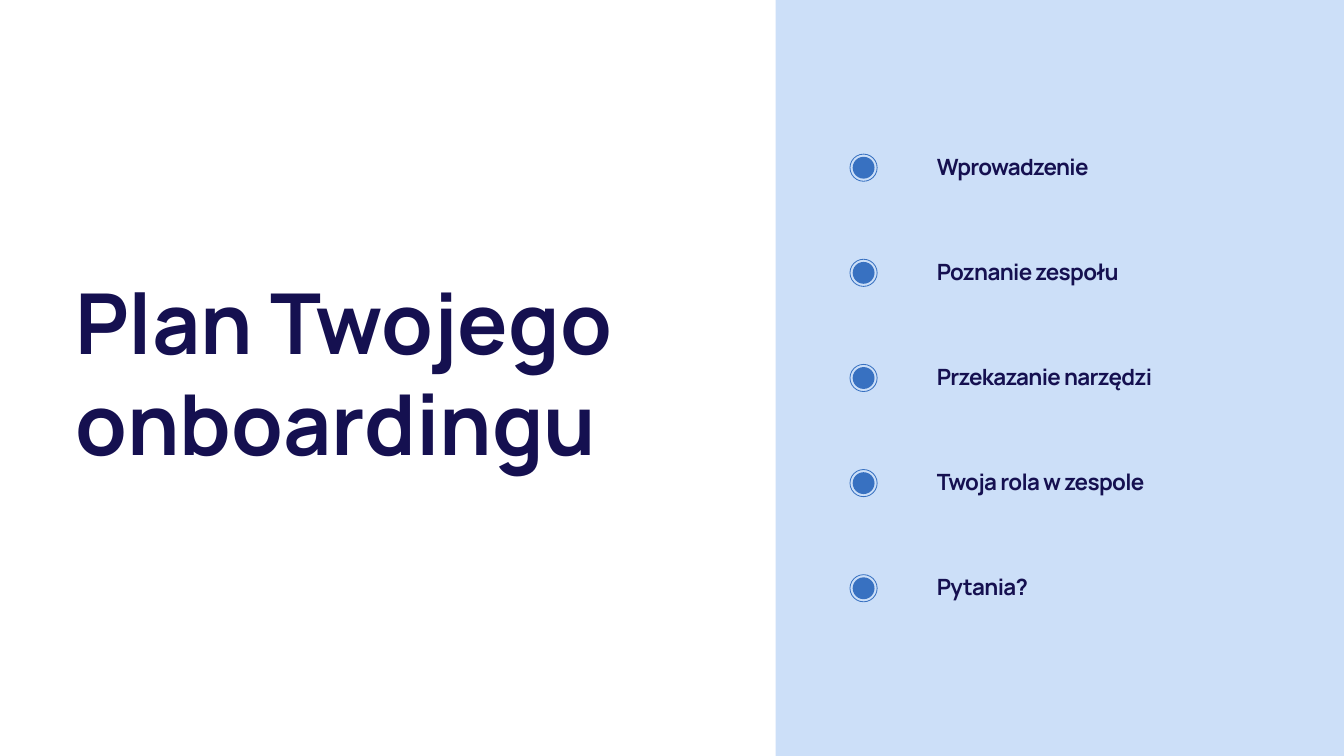
from pptx import Presentation
from pptx.dml.color import RGBColor
from pptx.enum import shapes, text
from pptx.util import Pt

COLOURS = {"panel": "CCDFF8", "marker": "3871C1", "ink": "151050"}
AGENDA = [
    "Wprowadzenie",
    "Poznanie zespołu",
    "Przekazanie narzędzi",
    "Twoja rola w zespole",
    "Pytania?",
]
SLIDE_WIDTH, SLIDE_HEIGHT = 1440, 810
PANEL_LEFT = 831
ROW_PITCH = 112.65
RING_SIZE, DOT_SIZE = 30, 23.4


def add_filled(parent, kind, left, top, width, height, colour):
    """Add a borderless preset shape in one colour."""
    shape = parent.add_shape(kind, Pt(left), Pt(top), Pt(width), Pt(height))
    shape.shadow.inherit = False
    shape.fill.solid()
    shape.fill.fore_color.rgb = RGBColor.from_string(COLOURS[colour])
    shape.line.fill.background()
    return shape


def add_label(slide, words, left, top, width, height, size, leading, tracking=0):
    """Add a bold Manrope text box with fixed leading and tracking in points."""
    label = slide.shapes.add_textbox(Pt(left), Pt(top), Pt(width), Pt(height))
    frame = label.text_frame
    frame.margin_left = frame.margin_right = 0
    frame.margin_top = frame.margin_bottom = 0
    frame.word_wrap = True
    frame.auto_size = text.MSO_AUTO_SIZE.SHAPE_TO_FIT_TEXT
    frame.text = words
    paragraph = frame.paragraphs[0]
    paragraph.line_spacing = Pt(leading)
    run = paragraph.runs[0]
    run.font.name = "Manrope"
    run.font.size = Pt(size)
    run.font.bold = True
    run.font.color.rgb = RGBColor.from_string(COLOURS["ink"])
    if tracking:
        run.font._element.set("spc", str(round(tracking * 100)))


def add_marker(slide, left, top):
    """Add a grouped dot with a thin ring around it."""
    marker = slide.shapes.add_group_shape().shapes
    inset = (RING_SIZE - DOT_SIZE) / 2
    add_filled(marker, shapes.MSO_SHAPE.OVAL, left + inset, top + inset,
               DOT_SIZE, DOT_SIZE, "marker")
    ring = add_filled(marker, shapes.MSO_SHAPE.DONUT, left, top,
                      RING_SIZE, RING_SIZE, "marker")
    ring.adjustments[0] = 0.03


def add_title(slide, left, top, width, height):
    """Place the slide title in the white area."""
    add_label(slide, "Plan Twojego onboardingu", left + 80.6, top + 290.2,
              width - 211.1, height - 587.5, 90, 108)


def add_agenda(slide, left, top, width, height):
    """Place the tinted panel and its evenly spaced agenda rows."""
    add_filled(slide.shapes, shapes.MSO_SHAPE.RECTANGLE,
               left, top, width, height, "panel")
    for row, topic in enumerate(AGENDA):
        row_top = top + 161.2 + row * ROW_PITCH
        add_marker(slide, left + 79.3, row_top + 3.5)
        add_label(slide, topic, left + 172.7, row_top, 355.7, 32.4,
                  24, 31.2, -0.7)


def main():
    """Build and save the onboarding agenda slide."""
    deck = Presentation()
    deck.slide_width, deck.slide_height = Pt(SLIDE_WIDTH), Pt(SLIDE_HEIGHT)
    slide = deck.slides.add_slide(deck.slide_layouts[6])
    add_agenda(slide, PANEL_LEFT, 0, SLIDE_WIDTH - PANEL_LEFT, SLIDE_HEIGHT)
    add_title(slide, 0, 0, PANEL_LEFT, SLIDE_HEIGHT)
    deck.save("out.pptx")


if __name__ == "__main__":
    main()
